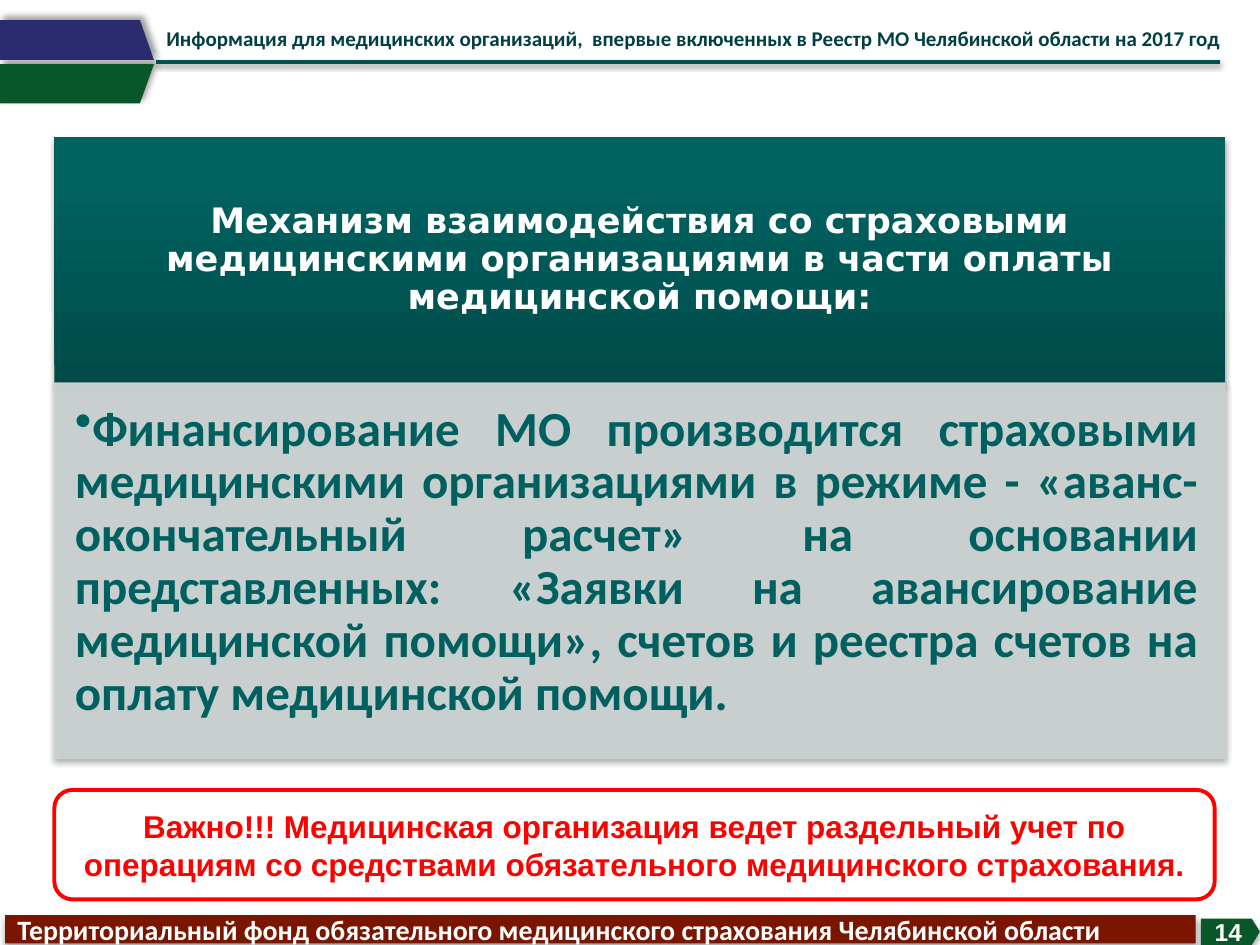
from lxml import etree
from pptx import Presentation
from pptx.dml.color import RGBColor
from pptx.enum.shapes import MSO_CONNECTOR, MSO_SHAPE
from pptx.enum.text import MSO_ANCHOR, MSO_AUTO_SIZE, PP_ALIGN
from pptx.oxml.ns import qn
from pptx.util import Pt

LEFT, CENTER, JUSTIFY = PP_ALIGN.LEFT, PP_ALIGN.CENTER, PP_ALIGN.JUSTIFY
TOP, MIDDLE = MSO_ANCHOR.TOP, MSO_ANCHOR.MIDDLE
RECTANGLE, ROUNDED, PENTAGON = MSO_SHAPE.RECTANGLE, MSO_SHAPE.ROUNDED_RECTANGLE, MSO_SHAPE.PENTAGON
STRAIGHT = MSO_CONNECTOR.STRAIGHT
FIXED_SIZE = MSO_AUTO_SIZE.NONE

COLORS = {
    "white": "FFFFFF", "black": "000000", "red": "FF0000", "green": "095729",
    "navy": "2B2C6F", "rule": "005353", "header": "004040", "dark teal": "004B49",
    "teal": "00615F", "panel": "CCD3D3", "body": "006060", "maroon": "7A1600",
}


def color(name):
    """Return the named palette colour."""
    return RGBColor.from_string(COLORS[name])


def set_alpha(parent, percent):
    """Give every RGB colour under the element an opacity."""
    for value in parent.iter(qn("a:srgbClr")):
        etree.SubElement(value, qn("a:alpha"), val=str(percent * 1000))


def add_shadow(shape, opacity, blur, distance, angle):
    """Add a black outer shadow to a shape or connector."""
    effects = etree.SubElement(shape.element.spPr, qn("a:effectLst"))
    shadow = etree.SubElement(
        effects, qn("a:outerShdw"), blurRad=str(Pt(blur)), dist=str(Pt(distance)),
        dir=str(angle * 60000), algn="ctr", rotWithShape="0")
    etree.SubElement(shadow, qn("a:srgbClr"), val=COLORS["black"])
    set_alpha(shadow, opacity)


def write(shape, text, font, size, ink, align=LEFT, anchor=MIDDLE, insets=(7.2, 0, 7.2, 0), spacing=1.0):
    """Fill a shape with one bold paragraph and return it."""
    frame = shape.text_frame
    frame.text = text
    frame.word_wrap = True
    frame.auto_size = FIXED_SIZE
    frame.vertical_anchor = anchor
    frame.margin_left, frame.margin_top, frame.margin_right, frame.margin_bottom = map(Pt, insets)
    para = frame.paragraphs[0]
    para.alignment = align
    para.line_spacing = spacing
    para.font.name = font
    para.font.size = Pt(size)
    para.font.bold = True
    para.font.color.rgb = color(ink)
    return para


def add_block(page, kind, box, fill):
    """Add a flat preset shape without an outline."""
    block = page.shapes.add_shape(kind, *map(Pt, box))
    block.fill.solid()
    block.fill.fore_color.rgb = color(fill)
    block.line.fill.background()
    return block


def add_flag(page, box, fill, wide_at_top):
    """Draw one half of the corner emblem, slanted on its right side."""
    left, top, width, height = box
    right, short, bottom = left + width, left + width - 8, top + height
    top_right, bottom_right = (right, short) if wide_at_top else (short, right)
    outline = page.shapes.build_freeform(Pt(left), Pt(top))
    outline.add_line_segments(
        [(Pt(top_right), Pt(top)), (Pt(bottom_right), Pt(bottom)), (Pt(left), Pt(bottom))])
    flag = outline.convert_to_shape()
    flag.fill.solid()
    flag.fill.fore_color.rgb = color(fill)
    flag.line.fill.background()
    add_shadow(flag, 40, 4, 3, 315)


def add_header(page, box):
    """Place the emblem, the running header and its rule."""
    left, top, width, height = box
    emblem = 88
    add_flag(page, (left, top + 25.2, emblem, 22.4), "green", True)
    add_flag(page, (left, top, emblem, 22.8), "navy", False)
    rule = page.shapes.add_connector(
        STRAIGHT, Pt(left + 89.3), Pt(top + 23.8), Pt(left + 697), Pt(top + 23.8))
    rule.line.color.rgb = color("rule")
    rule.line.width = Pt(2)
    add_shadow(rule, 38, 3.1, 1.6, 90)
    caption = page.shapes.add_textbox(Pt(left + emblem), Pt(top - 0.7), Pt(width - emblem), Pt(height))
    write(caption, "Информация для медицинских организаций,  впервые включенных в Реестр МО "
          "Челябинской области на 2017 год", "Calibri", 12, "header",
          anchor=TOP, insets=(7.2, 3.6, 7.2, 3.6))


def add_heading(page, box):
    """Turn the title placeholder into the gradient heading panel."""
    title = page.shapes.title
    title.left, title.top, title.width, title.height = map(Pt, box)
    title.fill.gradient()
    title.fill.gradient_angle = 90
    for stop, (position, name) in zip(title.fill.gradient_stops, ((0, "dark teal"), (0.8, "teal"))):
        stop.position = position
        stop.color.rgb = color(name)
    add_shadow(title, 35, 3.1, 1.8, 90)
    write(title, "Механизм взаимодействия со страховыми медицинскими организациями "
          "в части оплаты медицинской помощи:", "DejaVu Sans", 20, "white",
          align=CENTER, insets=(11.4, 6.5, 11.4, 6.5), spacing=0.9)


def add_body(page, box):
    """Place the grey panel with the bulleted explanation."""
    panel = add_block(page, RECTANGLE, box, "panel")
    panel.line.color.rgb = color("panel")
    panel.line.width = Pt(0.75)
    set_alpha(panel.element.spPr, 90)
    add_shadow(panel, 35, 3.1, 1.8, 90)
    para = write(
        panel, "Финансирование МО производится страховыми медицинскими организациями в режиме - "
        "«аванс-окончательный расчет» на основании представленных: «Заявки на авансирование "
        "медицинской помощи», счетов и реестра счетов на оплату медицинской помощи.",
        "Calibri", 28, "body", align=JUSTIFY, anchor=TOP,
        insets=(11.8, 11.8, 15.8, 17.3), spacing=0.9)
    properties = para._p.get_or_add_pPr()
    properties.set("marL", "0")
    properties.set("indent", "0")
    bullet = etree.Element(qn("a:buChar"), char="•")
    properties.find(qn("a:lnSpc")).addnext(bullet)


def add_notice(page, box):
    """Place the red outlined warning."""
    notice = add_block(page, ROUNDED, box, "white")
    notice.shadow.inherit = False
    notice.line.color.rgb = color("red")
    notice.line.width = Pt(2.25)
    write(notice, "Важно!!! Медицинская организация ведет раздельный учет по операциям "
          "со средствами обязательного медицинского страхования.", "Arial", 18, "red", align=CENTER)


def add_footer(page, box):
    """Place the organisation bar and the page number tag."""
    left, top, width, height = box
    bar = add_block(page, RECTANGLE, (left, top, 680.4, height), "maroon")
    write(bar, "Территориальный фонд обязательного медицинского страхования Челябинской области",
          "Calibri", 16, "white")
    tag_width = 33.8
    tag = add_block(page, PENTAGON, (left + width - tag_width, top + 2, tag_width, 15.1), "green")
    tag.adjustments[0] = 0.31
    write(tag, "14", "Arial", 14, "white", align=CENTER, insets=(0, 0, 0, 0))
    for part in (bar, tag):
        add_shadow(part, 32, 3.5, 2.2, 90)


def main():
    """Build and save the deck."""
    deck = Presentation()
    deck.slide_width, deck.slide_height = Pt(720), Pt(540)
    page = deck.slides.add_slide(deck.slide_layouts[5])
    add_heading(page, (31, 78.5, 669, 140.4))
    add_body(page, (31, 218.9, 669, 214.6))
    add_header(page, (0, 11.5, 720, 44))
    add_notice(page, (31, 451.4, 663.1, 62.6))
    add_footer(page, (2.9, 522.9, 717.1, 16.2))
    deck.save("out.pptx")


if __name__ == "__main__":
    main()
